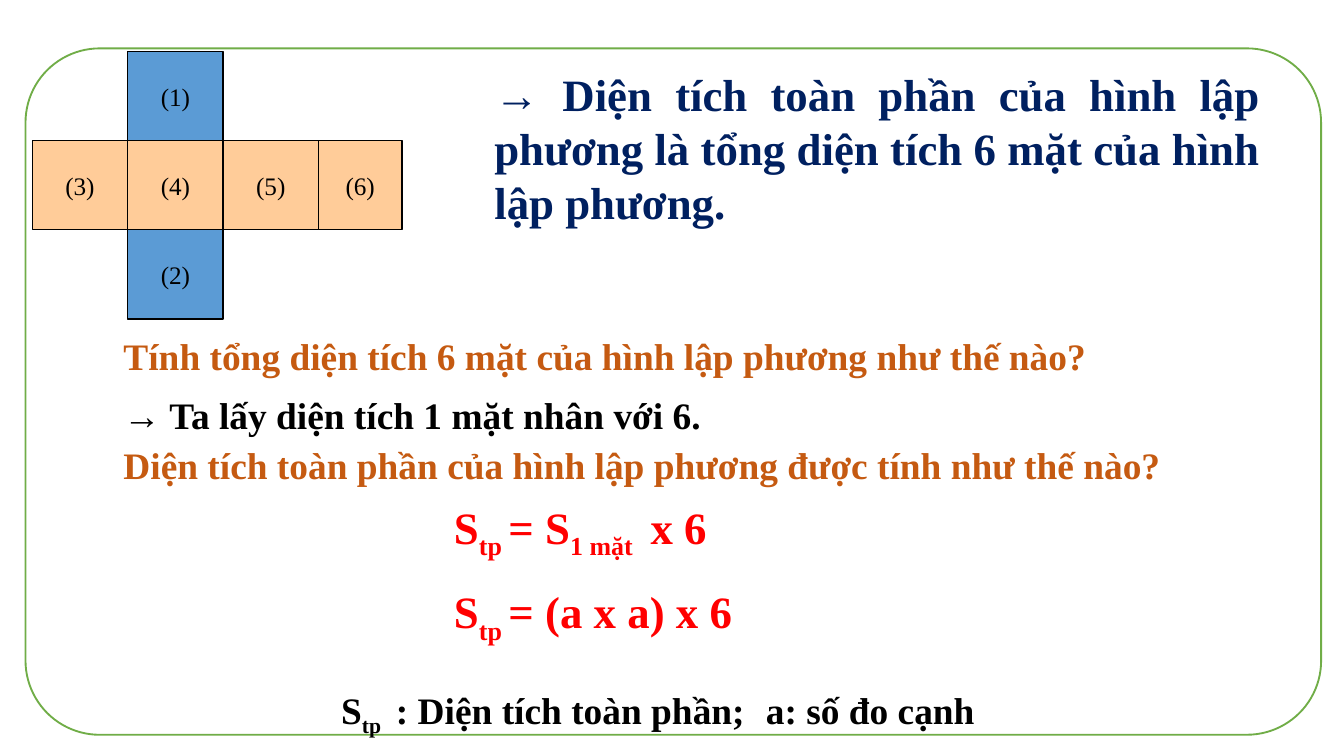
import pptx
import pptx.util
import pptx.dml.color
from pptx.enum.shapes import MSO_SHAPE
from pptx.enum.text import MSO_ANCHOR, PP_ALIGN

deck = pptx.Presentation()
deck.slide_width = pptx.util.Inches(10)
deck.slide_height = pptx.util.Inches(5.625)
slide = deck.slides.add_slide(deck.slide_layouts[6])

# The slide is a grid of 100 columns by 100 rows
COLUMN = deck.slide_width / 100
ROW = deck.slide_height / 100
FONT = "Times New Roman"
NAVY, ORANGE, BLACK, RED = "002060", "C55A11", "000000", "FF0000"
PEACH, BLUE = "FFCC99", "5B9BD5"


def color(hex_text):
    return pptx.dml.color.RGBColor.from_string(hex_text)


def place(left, top, width, height):
    return (round(left * COLUMN), round(top * ROW),
            round(width * COLUMN), round(height * ROW))


# Rounded frame
frame = slide.shapes.add_shape(MSO_SHAPE.ROUNDED_RECTANGLE,
                               *place(1.9, 6.4, 96.4, 90.8))
frame.adjustments[0] = 0.108
frame.shadow.inherit = False
frame.fill.solid()
frame.fill.fore_color.rgb = color("FFFFFF")
frame.line.color.rgb = color("70AD47")
frame.line.width = pptx.util.Pt(1)

# Unfolded cube: number, column, row, fill, width
FACE_WIDTH, FACE_HEIGHT = 7.1, 11.8
faces = [
    (3, 0, 1, PEACH, FACE_WIDTH),
    (2, 1, 2, BLUE, FACE_WIDTH),
    (4, 1, 1, PEACH, FACE_WIDTH),
    (6, 3, 1, PEACH, 6.2),
    (5, 2, 1, PEACH, FACE_WIDTH),
    (1, 1, 0, BLUE, FACE_WIDTH),
]
for number, column, row, fill, width in faces:
    face = slide.shapes.add_shape(
        MSO_SHAPE.RECTANGLE,
        *place(2.4 + column * FACE_WIDTH, 6.8 + row * FACE_HEIGHT,
               width, FACE_HEIGHT))
    face.shadow.inherit = False
    face.fill.solid()
    face.fill.fore_color.rgb = color(fill)
    face.line.color.rgb = color(BLACK)
    face.line.width = pptx.util.Pt(0.75)
    face.text_frame.text = f"({number})"
    face.text_frame.word_wrap = False
    face.text_frame.vertical_anchor = MSO_ANCHOR.MIDDLE
    label = face.text_frame.paragraphs[0]
    label.alignment = PP_ALIGN.CENTER
    label.runs[0].font.name = FONT
    label.runs[0].font.size = pptx.util.Pt(13.5)
    label.runs[0].font.color.rgb = color(BLACK)

# Statements: place, size, colour, alignment, pieces (every second is a subscript)
LEFT, JUSTIFY = PP_ALIGN.LEFT, PP_ALIGN.JUSTIFY
statements = [
    ((35.8, 8, 58.9, 23.3), 24, NAVY, JUSTIFY,
     ["→ Diện tích toàn phần của hình lập phương là tổng diện tích 6 mặt của hình lập phương."]),
    ((8.2, 43.2, 79.9, 7.8), 20, ORANGE, LEFT,
     ["Tính tổng diện tích 6 mặt của hình lập phương như thế nào?"]),
    ((8.2, 51, 89.2, 7.8), 20, BLACK, JUSTIFY,
     ["→ Ta lấy diện tích 1 mặt nhân với 6."]),
    ((8.2, 57.6, 85.8, 7.8), 20, ORANGE, LEFT,
     ["Diện tích toàn phần của hình lập phương được tính như thế nào?"]),
    ((32.8, 65.2, 26.7, 8.9), 24, RED, LEFT,
     ["S", "tp ", "= S", "1 mặt ", " x 6"]),
    ((32.8, 76.4, 26.7, 8.9), 24, RED, LEFT,
     ["S", "tp ", "= (a x a) x 6"]),
    ((24.4, 90, 70.4, 7.8), 20, BLACK, LEFT,
     ["S", "tp ", " : Diện tích toàn phần;"]),
    ((56, 90, 39.2, 7.8), 20, BLACK, LEFT, ["a: số đo cạnh"]),
]
for area, size, ink, alignment, pieces in statements:
    statement = slide.shapes.add_textbox(*place(*area))
    statement.text_frame.word_wrap = True
    line = statement.text_frame.paragraphs[0]
    line.alignment = alignment
    for index, piece in enumerate(pieces):
        run = line.add_run()
        run.text = piece
        run.font.name = FONT
        run.font.size = pptx.util.Pt(size)
        run.font.bold = True
        run.font.color.rgb = color(ink)
        if index % 2:
            run.font._element.set("baseline", "-25000")

deck.save("out.pptx")
